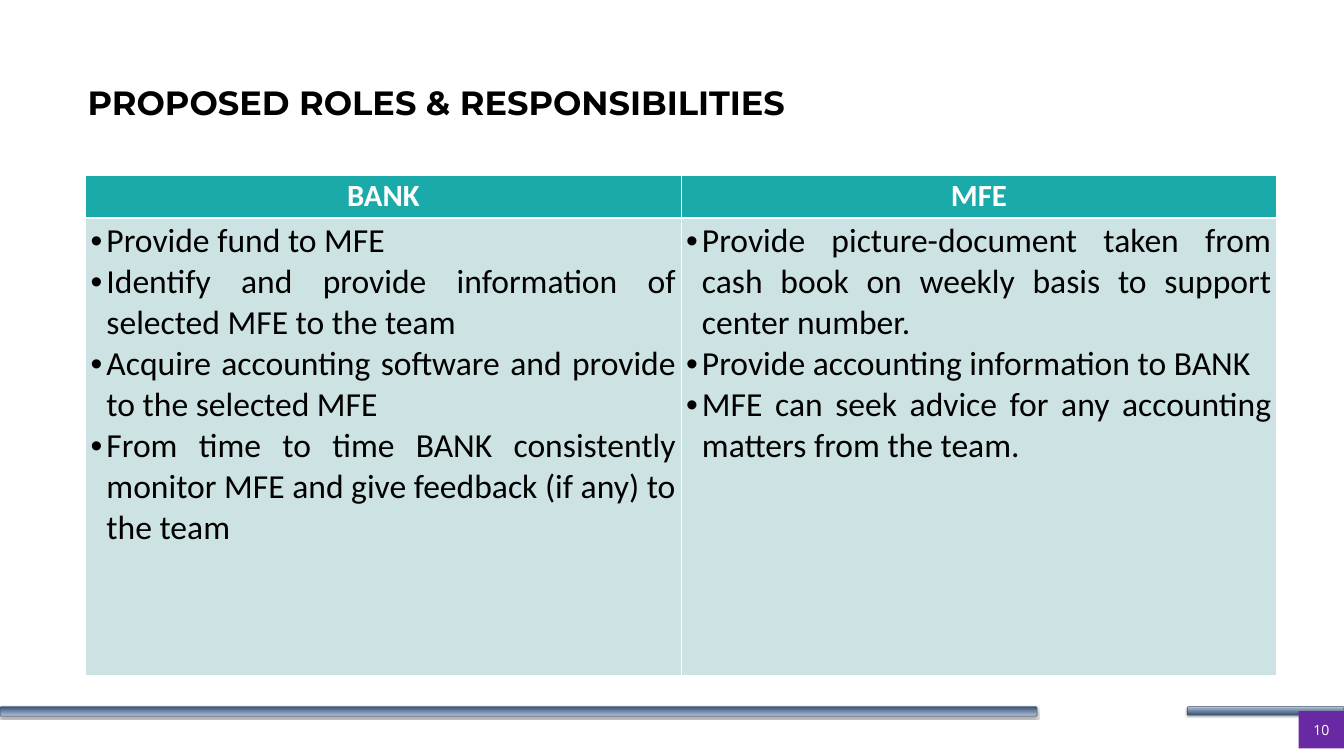
"""Build the slide on proposed roles and responsibilities."""
from dataclasses import dataclass
from typing import Any

from lxml.etree import SubElement
from pptx import Presentation
from pptx.dml.color import RGBColor
from pptx.enum.shapes import MSO_SHAPE as Preset
from pptx.enum.text import MSO_ANCHOR as Anchor, MSO_AUTO_SIZE as AutoSize, PP_ALIGN as Align
from pptx.oxml.ns import qn
from pptx.util import Pt

WHITE = RGBColor(0xFF, 0xFF, 0xFF)
BLACK = RGBColor(0x00, 0x00, 0x00)
TEAL = RGBColor(0x1B, 0xAA, 0xAA)
PALE_TEAL = RGBColor(0xCD, 0xE2, 0xE2)
PURPLE = RGBColor(0x69, 0x29, 0xA2)
BAR_DARK = RGBColor(0x32, 0x51, 0x78)
BAR_LIGHT = RGBColor(0xB4, 0xBF, 0xD4)
BAR_EDGE = RGBColor(0x37, 0x50, 0x6F)

TITLE_FONT = {"name": "Montserrat", "size": Pt(48), "bold": True}
HEADER_FONT = {"name": "Calibri", "size": Pt(44), "bold": True}
BODY_FONT = {"name": "Calibri", "size": Pt(48), "bold": False}
NUMBER_FONT = {"name": "Open Sans", "size": Pt(20), "bold": False}
BULLET_INDENT = Pt(22.5)


@dataclass(frozen=True)
class Bar:
    left: float
    width: float
    height: float
    flipped: bool


@dataclass(frozen=True)
class Role:
    party: str
    duties: tuple[str, ...]


BARS = (
    Bar(0, 1481.76, 13.68, False),
    Bar(1696.32, 223.92, 12.24, True),
)
ROLES = (
    Role("BANK", (
        "Provide fund to MFE",
        "Identify and provide information of selected MFE to the team",
        "Acquire accounting software and provide to the selected MFE",
        "From time to time BANK consistently monitor MFE and give feedback (if any) to the team",
    )),
    Role("MFE", (
        "Provide picture-document taken from cash book on weekly basis to support center number.",
        "Provide accounting information to BANK",
        "MFE can seek advice for any accounting matters from the team.",
    )),
)


def set_attributes(target: Any, values: dict[str, Any]) -> None:
    for name, value in values.items():
        setattr(target, name, value)


def format_paragraph(paragraph: Any, font: dict[str, Any], color: RGBColor, alignment: Any) -> None:
    paragraph.alignment = alignment
    set_attributes(paragraph.font, font)
    paragraph.font.color.rgb = color


def add_bar(slide: Any, bar: Bar) -> None:
    shape = slide.shapes.add_shape(
        Preset.ROUNDED_RECTANGLE, Pt(bar.left), Pt(1009.44), Pt(bar.width), Pt(bar.height))
    shape.rotation = 180
    if bar.flipped:
        shape._element.spPr.xfrm.set("flipV", "1")
    shape.fill.gradient()
    shape.fill.gradient_angle = 90
    for stop, color in zip(shape.fill.gradient_stops, (BAR_DARK, BAR_LIGHT)):
        stop.color.rgb = color
    shape.line.color.rgb = BAR_EDGE
    shape.line.width = Pt(0.75)
    shape.shadow.inherit = False
    effects = shape._element.spPr.find(qn("a:effectLst"))
    shadow = SubElement(effects, qn("a:outerShdw"), blurRad=str(Pt(3.1)),
                        dist=str(Pt(1.8)), dir="5400000", rotWithShape="0")
    color = SubElement(shadow, qn("a:srgbClr"), val=str(BLACK))
    SubElement(color, qn("a:alpha"), val="35000")


def add_slide_number(slide: Any, number: str) -> None:
    shape = slide.shapes.add_shape(
        Preset.RECTANGLE, Pt(1855.44), Pt(1015.92), Pt(64.8), Pt(53.28))
    shape.shadow.inherit = False
    shape.fill.solid()
    shape.fill.fore_color.rgb = PURPLE
    shape.line.fill.background()
    frame = shape.text_frame
    set_attributes(frame, {
        "text": number, "vertical_anchor": Anchor.MIDDLE, "auto_size": AutoSize.SHAPE_TO_FIT_TEXT,
        "margin_left": 0, "margin_right": 0, "margin_top": Pt(14.4), "margin_bottom": Pt(14.4),
    })
    format_paragraph(frame.paragraphs[0], NUMBER_FONT, WHITE, Align.CENTER)


def set_title(slide: Any, text: str) -> None:
    title = slide.shapes.title
    set_attributes(title, {
        "left": Pt(108), "top": Pt(55.44), "width": Pt(1728), "height": Pt(180)})
    set_attributes(title.text_frame, {
        "text": text, "vertical_anchor": Anchor.MIDDLE, "auto_size": AutoSize.NONE,
        "margin_left": Pt(17.28), "margin_right": Pt(17.28),
        "margin_top": Pt(8.64), "margin_bottom": Pt(8.64),
    })
    format_paragraph(title.text_frame.paragraphs[0], TITLE_FONT, BLACK, Align.LEFT)


def style_cell(cell: Any, fill: RGBColor, top: float, bottom: float) -> None:
    properties = cell._tc.get_or_add_tcPr()
    for side, width in {"L": 1, "R": 1, "T": top, "B": bottom}.items():
        border = SubElement(properties, qn(f"a:ln{side}"), w=str(Pt(width)))
        line_fill = SubElement(border, qn("a:solidFill"))
        SubElement(line_fill, qn("a:srgbClr"), val=str(WHITE))
    cell.fill.solid()
    cell.fill.fore_color.rgb = fill


def add_bullet(paragraph: Any) -> None:
    properties = paragraph._p.get_or_add_pPr()
    properties.set("marL", str(BULLET_INDENT))
    properties.set("indent", str(-BULLET_INDENT))
    SubElement(properties, qn("a:buFont"), typeface="Arial")
    SubElement(properties, qn("a:buChar"), char="•")


def add_roles_table(slide: Any, roles: tuple[Role, ...]) -> None:
    table = slide.shapes.add_table(
        2, len(roles), Pt(122.4), Pt(249.84), Pt(1701.72), Pt(715.32)).table
    for row, height in zip(table.rows, (61.92, 653.4)):
        row.height = Pt(height)
    for column, role in enumerate(roles):
        header, body = table.cell(0, column), table.cell(1, column)
        style_cell(header, TEAL, 1, 3)
        header.text = role.party
        format_paragraph(header.text_frame.paragraphs[0], HEADER_FONT, WHITE, Align.CENTER)
        style_cell(body, PALE_TEAL, 3, 1)
        body.text = "\n".join(role.duties)
        for paragraph in body.text_frame.paragraphs:
            add_bullet(paragraph)
            format_paragraph(paragraph, BODY_FONT, BLACK, Align.JUSTIFY)


def main() -> None:
    presentation = Presentation()
    set_attributes(presentation, {"slide_width": Pt(1920.24), "slide_height": Pt(1080)})
    slide = presentation.slides.add_slide(presentation.slide_layouts.get_by_name("Title Only"))
    for bar in BARS:
        add_bar(slide, bar)
    add_slide_number(slide, "10")
    set_title(slide, "PROPOSED ROLES & RESPONSIBILITIES")
    add_roles_table(slide, ROLES)
    presentation.save("out.pptx")


if __name__ == "__main__":
    main()
